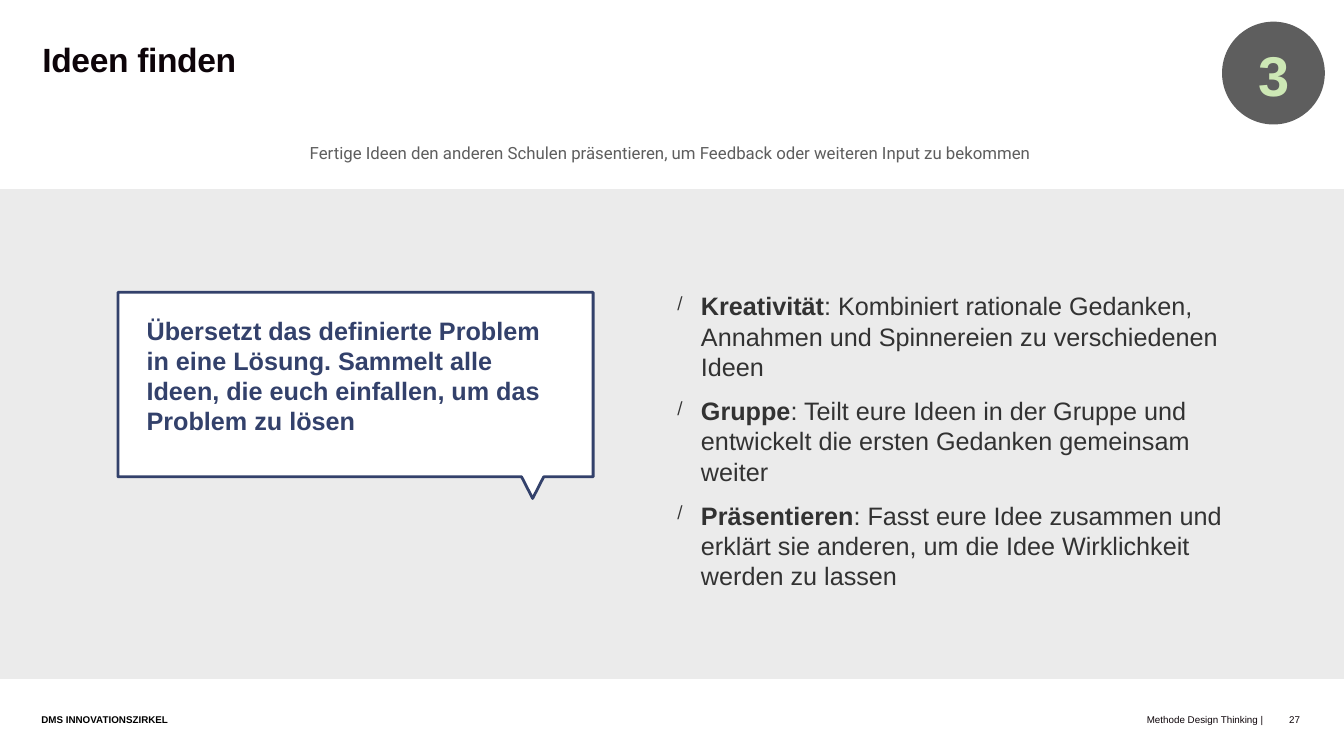
from typing import NamedTuple

from lxml.etree import SubElement
from pptx import Presentation
from pptx.dml.color import RGBColor
from pptx.enum.shapes import MSO_SHAPE
from pptx.enum.text import MSO_ANCHOR, PP_ALIGN
from pptx.oxml.ns import qn
from pptx.util import Pt

PX = 9144
INK = "0D0409"
NAVY = "33416B"
GREY = "5E5E5E"


class Box(NamedTuple):
    x: int
    y: int
    w: int
    h: int

    def emu(self) -> list[int]:
        return [v * PX for v in self]


class Point(NamedTuple):
    head: str
    text: str


POINTS = [
    Point("Kreativität", ": Kombiniert rationale Gedanken, Annahmen und Spinnereien zu verschiedenen Ideen"),
    Point("Gruppe", ": Teilt eure Ideen in der Gruppe und entwickelt die ersten Gedanken gemeinsam weiter"),
    Point("Präsentieren", ": Fasst eure Idee zusammen und erklärt sie anderen, um die Idee Wirklichkeit werden zu lassen"),
]


def rgb(color: str) -> RGBColor:
    return RGBColor.from_string(color)


def paint(sp, fill: str, line: str | None = None, width: float = 0) -> None:
    sp.shadow.inherit = False
    sp.fill.solid()
    sp.fill.fore_color.rgb = rgb(fill)
    if line:
        sp.line.color.rgb = rgb(line)
        sp.line.width = Pt(width)
    else:
        sp.line.fill.background()


def add_shape(s, kind: MSO_SHAPE, box: Box, fill: str) -> None:
    paint(s.shapes.add_shape(kind, *box.emu()), fill)


def add_frame(s, box: Box, anchor=MSO_ANCHOR.TOP, inset: int = 0, wrap: bool = True):
    tf = s.shapes.add_textbox(*box.emu()).text_frame
    tf.margin_left = tf.margin_right = tf.margin_top = tf.margin_bottom = inset * PX
    tf.vertical_anchor = anchor
    tf.word_wrap = wrap
    return tf


def add_run(p, text: str, size: float, color: str, bold: bool = False,
            font: str = "Arial", spacing: int = 0) -> None:
    r = p.add_run()
    r.text = text
    r.font.size = Pt(size)
    r.font.name = font
    r.font.bold = bold
    r.font.color.rgb = rgb(color)
    if spacing:
        r.font._element.set("spc", str(spacing))


def add_text(s, text: str, box: Box, size: float, color: str, align=PP_ALIGN.LEFT,
             leading: float | None = None, anchor=MSO_ANCHOR.TOP, inset: int = 0,
             wrap: bool = True, **fmt) -> None:
    p = add_frame(s, box, anchor, inset, wrap).paragraphs[0]
    p.alignment = align
    if leading:
        p.line_spacing = Pt(leading)
    add_run(p, text, size, color, **fmt)


def set_bullet(p, char: str, indent: int, percent: int) -> None:
    pPr = p._p.get_or_add_pPr()
    pPr.set("marL", str(indent * PX))
    pPr.set("indent", str(-indent * PX))
    SubElement(pPr, qn("a:buSzPct")).set("val", str(percent * 1000))
    SubElement(pPr, qn("a:buChar")).set("char", char)


def add_points(s, points: list[Point], box: Box) -> None:
    tf = add_frame(s, box)
    for i, point in enumerate(points):
        p = tf.add_paragraph() if i else tf.paragraphs[0]
        set_bullet(p, "/", 47, 75)
        p.level = 1
        p.line_spacing = Pt(43.2)
        if i:
            p.space_before = Pt(20)
        add_run(p, point.head, 36, "323232", bold=True)
        add_run(p, point.text, 36, "323232")


def add_callout(s, box: Box, tip_x: int, tip_h: int) -> None:
    right, bottom = box.x + box.w, box.y + box.h
    fb = s.shapes.build_freeform(box.x, box.y, scale=PX)
    fb.add_line_segments([
        (box.x, bottom), (tip_x - 22, bottom), (tip_x, bottom + tip_h),
        (tip_x + 22, bottom), (right, bottom), (right, box.y),
    ], close=True)
    paint(fb.convert_to_shape(), "FFFFFF", NAVY, 4)


def main() -> None:
    prs = Presentation()
    prs.slide_width, prs.slide_height = 2667 * PX, 1500 * PX
    s = prs.slides.add_slide(prs.slide_layouts[6])

    add_text(s, "27", Box(2557, 1417, 23, 23), 14, INK, PP_ALIGN.RIGHT, 16, wrap=False)
    add_text(s, "Methode Design Thinking |", Box(1291, 1417, 1216, 23), 14, INK, PP_ALIGN.RIGHT, 16)
    add_text(s, "Ideen finden", Box(84, 83, 2501, 150), 48, INK, leading=54, bold=True, spacing=-50)
    add_text(s, "DMS INNOVATIONSZIRKEL", Box(82, 1417, 1227, 23), 14, "000000", leading=16, bold=True)

    add_shape(s, MSO_SHAPE.RECTANGLE, Box(-34, 375, 2736, 972), "EBEBEB")
    add_callout(s, Box(234, 580, 943, 366), 1057, 43)
    add_points(s, POINTS, Box(1344, 577, 1091, 650))
    add_text(s, "Übersetzt das definierte Problem in eine Lösung. Sammelt alle Ideen, "
             "die euch einfallen, um das Problem zu lösen",
             Box(291, 625, 829, 297), 36, NAVY, leading=43, bold=True)

    add_shape(s, MSO_SHAPE.OVAL, Box(2425, 43, 204, 204), GREY)
    add_text(s, "3", Box(2497, 81, 60, 133), 80, "CDE8B5", PP_ALIGN.CENTER, 96,
             MSO_ANCHOR.MIDDLE, wrap=False, bold=True, spacing=-240)
    add_text(s, "Fertige Ideen den anderen Schulen präsentieren, um Feedback oder weiteren Input zu bekommen",
             Box(596, 279, 1467, 50), 24, GREY, PP_ALIGN.CENTER,
             anchor=MSO_ANCHOR.MIDDLE, inset=6, wrap=False, font="Roboto")

    prs.save("out.pptx")


if __name__ == "__main__":
    main()
